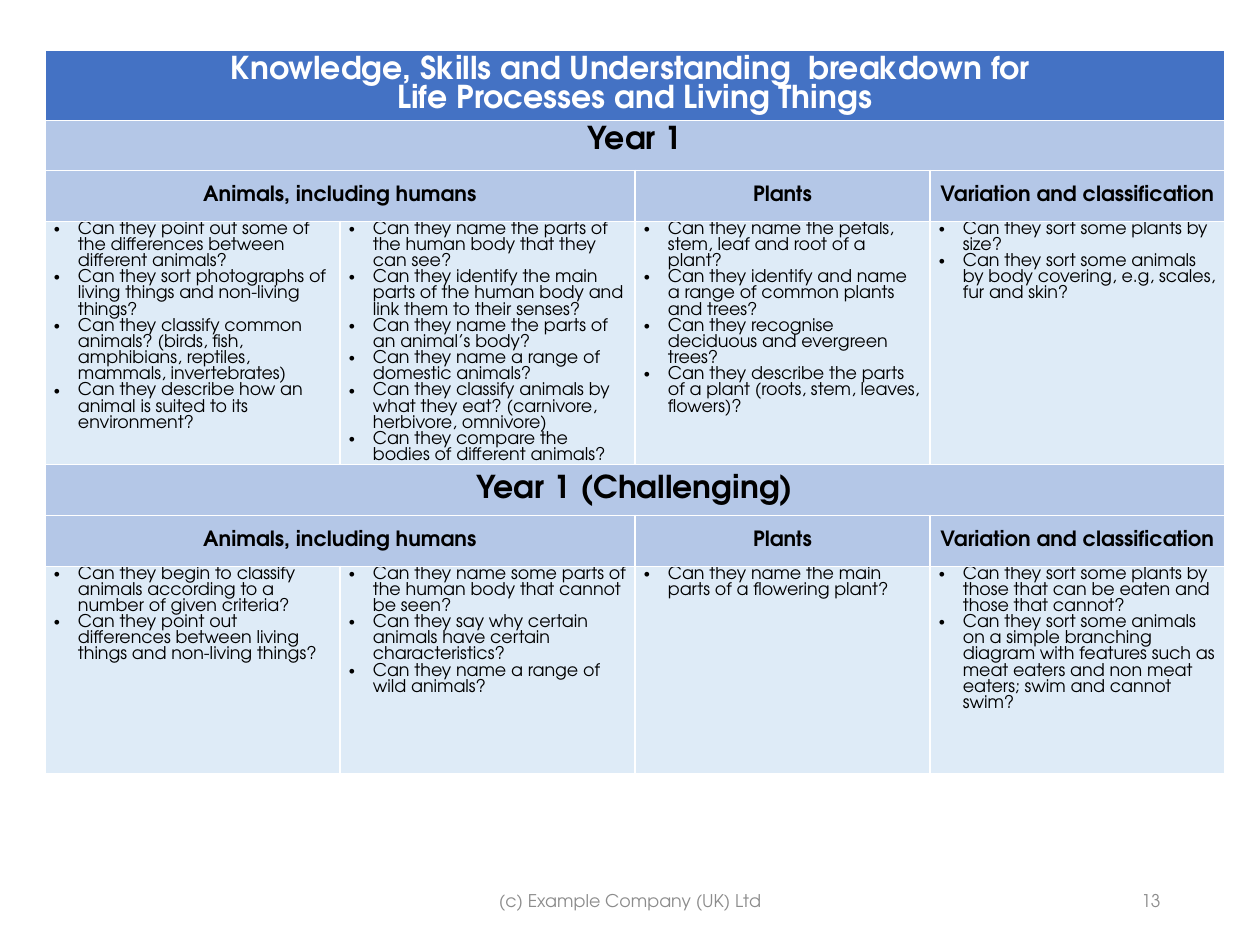
from lxml import etree
from pptx import Presentation
from pptx import util as u
from pptx.dml.color import RGBColor
from pptx.enum import text
from pptx.oxml.ns import qn

FONT = "TeX Gyre Adventor"
BLUE, MID_BLUE, PALE_BLUE = "4472C4", "B4C7E7", "DEEBF7"
WHITE, BLACK, GREY = "FFFFFF", "000000", "8C8C8C"

# Content
TITLE = ["Knowledge, Skills and Understanding  breakdown for ",
         "Life Processes and Living Things"]
# Strand name and the number of columns it covers
STRANDS = [("Animals, including humans", 2), ("Plants", 1),
           ("Variation and classification ", 1)]
YEARS = [
    ("Year 1", [
        ["Can they point out some of the differences between different animals?",
         "Can they sort photographs of living things and non-living things?",
         "Can they classify common animals? (birds, fish, amphibians, reptiles, "
         "mammals, invertebrates)",
         "Can they describe how an animal is suited to its environment?"],
        ["Can they name the parts of the human body that they can see?",
         "Can they identify the main parts of the human body and link them to their senses?",
         "Can they name the parts of an animal’s body?",
         "Can they name a range of domestic animals?",
         "Can they classify animals by what they eat? (carnivore, herbivore, omnivore)",
         "Can they compare the bodies of different animals?"],
        ["Can they name the petals, stem, leaf and root of a plant?",
         "Can they identify and name a range of common plants and trees?",
         "Can they recognise deciduous and evergreen trees?",
         "Can they describe the parts of a plant (roots, stem, leaves, flowers)?"],
        ["Can they sort some plants by size?",
         "Can they sort some animals by body covering, e.g, scales, fur and skin?"],
    ]),
    ("Year 1 (Challenging)", [
        ["Can they begin to classify animals according to a number of given criteria?",
         "Can they point out differences between living things and non-living things?"],
        ["Can they name some parts of the human body that cannot be seen?",
         "Can they say why certain animals have certain characteristics?",
         "Can they name a range of wild animals?"],
        ["Can they name the main parts of a flowering plant?"],
        ["Can they sort some plants by those that can be eaten and those that cannot?",
         "Can they sort some animals on a simple branching diagram with features such as "
         "meat eaters and non meat eaters; swim and cannot swim?"],
    ]),
]
# Text, alignment, left and width
FOOTERS = [("(c) Example Company (UK) Ltd", text.PP_ALIGN.CENTER, 417, 426),
           ("13", text.PP_ALIGN.RIGHT, 890, 283)]

# Layout in px
COLUMNS, COLUMN_WIDTH = 4, 295
ROW_HEIGHTS = [70, 50, 51, 243, 51, 51, 207]
TABLE_LEFT, TABLE_TOP = 45, 50
FOOTER_TOP, FOOTER_HEIGHT = 876, 50
BULLET_INDENT = 24


def px(n):
    return u.Emu(round(n * 914400 / 126))


def rgb(colour):
    return RGBColor.from_string(colour)


def write(frame, lines, size, colour, align, bold=False):
    frame.text = "\n".join(lines)
    for paragraph in frame.paragraphs:
        paragraph.alignment = align
        for run in paragraph.runs:
            font = run.font
            font.name, font.size, font.bold = FONT, u.Pt(size), bold
            font.color.rgb = rgb(colour)


def add_bullets(frame):
    for paragraph in frame.paragraphs:
        props = paragraph._p.get_or_add_pPr()
        props.set("marL", str(px(BULLET_INDENT)))
        props.set("indent", str(-px(BULLET_INDENT)))
        etree.SubElement(props, qn("a:buFont")).set("typeface", "Arial")
        etree.SubElement(props, qn("a:buChar")).set("char", "•")


def fill_cell(table, row, column, span, fill, lines, size, colour=BLACK,
              align=text.PP_ALIGN.CENTER, bold=True, middle=True, inset=(9, 0)):
    cell = table.cell(row, column)
    if span > 1:
        cell.merge(table.cell(row, column + span - 1))
    cell.fill.solid()
    cell.fill.fore_color.rgb = rgb(fill)
    cell.margin_left = cell.margin_right = px(inset[0])
    cell.margin_top = cell.margin_bottom = px(inset[1])
    cell.vertical_anchor = text.MSO_ANCHOR.MIDDLE if middle else text.MSO_ANCHOR.TOP
    write(cell.text_frame, lines, size, colour, align, bold)
    return cell


prs = Presentation()
prs.slide_width, prs.slide_height = px(1260), px(945)
slide = prs.slides.add_slide(prs.slide_layouts[6])

# Table grid
table = slide.shapes.add_table(
    len(ROW_HEIGHTS), COLUMNS, px(TABLE_LEFT), px(TABLE_TOP),
    px(COLUMNS * COLUMN_WIDTH), px(sum(ROW_HEIGHTS))).table
for column in table.columns:
    column.width = px(COLUMN_WIDTH)
for row, height in zip(table.rows, ROW_HEIGHTS):
    row.height = px(height)

# Title row
fill_cell(table, 0, 0, COLUMNS, BLUE, TITLE, 18, WHITE, middle=False, inset=(13, 6))

# Each year: heading, strands, questions
for index, (year, questions) in enumerate(YEARS):
    top = 1 + 3 * index
    first = index == 0
    fill_cell(table, top, 0, COLUMNS, MID_BLUE, [year], 18,
              middle=not first, inset=(13, 6) if first else (9, 0))
    column = 0
    for strand, span in STRANDS:
        fill_cell(table, top + 1, column, span, MID_BLUE, [strand], 12)
        column += span
    for column, lines in enumerate(questions):
        cell = fill_cell(table, top + 2, column, 1, PALE_BLUE, lines, 10,
                         align=text.PP_ALIGN.LEFT, bold=False, middle=False)
        add_bullets(cell.text_frame)

# Footer and page number
for words, align, left, width in FOOTERS:
    frame = slide.shapes.add_textbox(
        px(left), px(FOOTER_TOP), px(width), px(FOOTER_HEIGHT)).text_frame
    frame.word_wrap = True
    frame.vertical_anchor = text.MSO_ANCHOR.MIDDLE
    write(frame, [words], 10, GREY, align)

prs.save("out.pptx")
